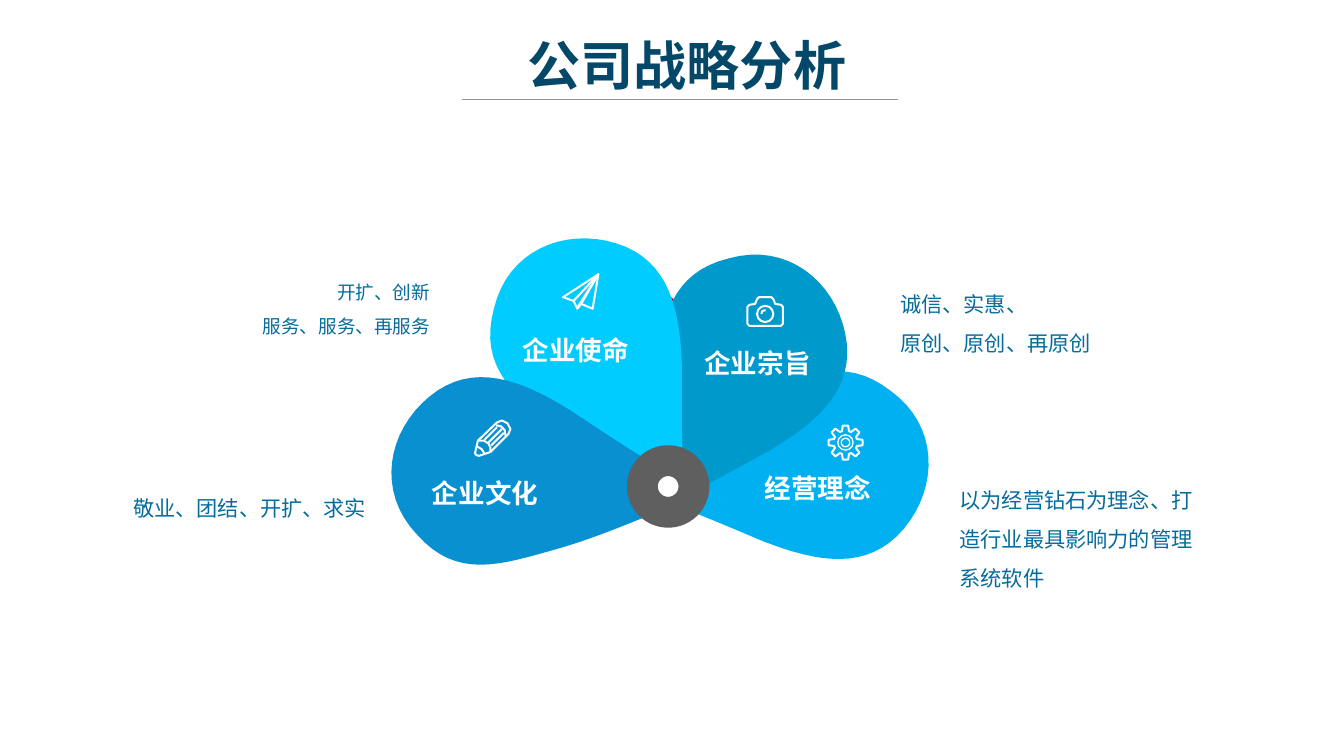
from dataclasses import dataclass
from math import cos, radians, sin
from typing import Any

from lxml import etree
from pptx import Presentation
from pptx import util as u
from pptx.dml.color import RGBColor
from pptx.enum import shapes, text
from pptx.oxml import ns

COLUMNS, ROWS = 1406, 791
FINE = 100
CURVE_STEPS = 16
LINE_HEIGHT = 1.22

PETAL = [(.83, 0), (1, .17),
         (.96, .3), (.92, .43), (.86, .57), (.76, .8), (.69, .99), (.43, 1),
         (.17, 1.02), (0, .81), (0, .57), (0, .32), (.2, .21), (.43, .13),
         (.59, .08), (.72, .04), (.83, 0)]
PETALS = [
    ((675, 332, 205, 190), 172.4, "navy"),
    ((558, 308, 205, 190), 113.1, "red"),
    ((466, 380, 205, 190), 57.9, "white"),
    ((722, 370, 241, 237), 219.9, "sky"),
    ((649, 271, 241, 237), 168.5, "teal"),
    ((504, 256, 241, 237), 107.2, "cyan"),
    ((418, 379, 241, 237), 50.5, "blue"),
]
LABELS = [
    ((442, 487, 180, 42), "企业文化"),
    ((537, 337, 145, 59), "企业使命"),
    ((727, 351, 139, 59), "企业宗旨"),
    ((790, 482, 174, 59), "经营理念"),
]
DETAILS = [
    ((128, 499, 265, 50), ["敬业、团结、开扩、求实"], "body", "RIGHT"),
    ((199, 277, 261, 80), ["开扩、创新", "服务、服务、再服务"], "small", "RIGHT"),
    ((994, 491, 269, 130), ["以为经营钻石为理念、打造行业最具影响力的管理系统软件"], "body", "LEFT"),
    ((932, 286, 261, 90), ["诚信、实惠、", "原创、原创、再原创"], "body", "LEFT"),
]
PLANE = [
    ([(626, 287), (589, 311), (600, 315), (604, 323), (608, 318), (620, 323)], True),
    ([(600, 315), (626, 287), (608, 318)], False),
    ([(604, 322), (626, 287)], False),
]
PENCIL = [
    ([(497, 474), (500, 461), (520, 442), (525, 440), (531, 443),
      (534, 449), (532, 454), (513, 473), (501, 477), (498, 476)], True),
    ([(501, 461), (506, 461), (511, 464), (513, 468), (513, 473)], False),
    ([(519, 445), (524, 446), (528, 450), (529, 456)], False),
    ([(499, 467), (504, 470), (507, 475)], False),
    ([(507, 460), (520, 447)], False),
    ([(511, 463), (525, 449)], False),
    ([(514, 466), (527, 453)], False),
]
CAMERA = [
    ([(782, 321), (784, 319), (790, 318), (792, 313), (794, 311), (807, 311),
      (809, 313), (811, 318), (817, 319), (819, 321), (819, 339), (817, 341),
      (784, 341), (782, 339)], True),
]
GLINT = [([(796.5, 328.5), (797.5, 325.5), (801, 324.5)], False)]
GEAR_CENTRE = (884.5, 463)
LENS_CENTRE = (800.5, 328.5)


def assign(target, values):
    for name, value in values.items():
        setattr(target, name, value)


def curve_points(controls):
    points = list(controls[:2])
    for first in range(2, len(controls), 3):
        a, (b, c, d) = controls[first - 1], controls[first:first + 3]
        for step in range(1, CURVE_STEPS + 1):
            t = step / CURVE_STEPS
            weights = ((1 - t) ** 3, 3 * t * (1 - t) ** 2, 3 * t * t * (1 - t), t ** 3)
            points.append(tuple(sum(w * p[axis] for w, p in zip(weights, (a, b, c, d)))
                                for axis in (0, 1)))
    return points


def gear_points(teeth=8):
    x, y = GEAR_CENTRE
    corners = ((-17, 12.5), (-9, 18), (9, 18), (17, 12.5))
    return [(x + radius * cos(radians(360 / teeth * tooth + turn)),
             y + radius * sin(radians(360 / teeth * tooth + turn)))
            for tooth in range(teeth) for turn, radius in corners]


@dataclass
class Theme:
    font = "Noto Sans CJK SC"
    sizes = {"title": 40, "label": 20, "body": 16, "small": 14}
    colours = {"white": "FFFFFF", "ink": "034868", "note": "056C9C", "rule": "969696",
               "hub": "5F5F5F", "navy": "051029", "red": "CC0023", "sky": "00B0F0",
               "teal": "0099CC", "cyan": "00CCFF", "blue": "0890D0"}

    def colour(self, name):
        return RGBColor.from_string(self.colours[name])


@dataclass
class Board:
    theme: Theme
    slide: Any
    width: int
    height: int

    def box(self, cells):
        x, y, wide, high = cells
        return {"left": round(x * self.width / COLUMNS), "top": round(y * self.height / ROWS),
                "width": round(wide * self.width / COLUMNS),
                "height": round(high * self.height / ROWS)}

    def style(self, shape, fill=None, line=None, weight=1.5):
        shape.shadow.inherit = False
        if fill:
            shape.fill.solid()
            shape.fill.fore_color.rgb = self.theme.colour(fill)
        else:
            shape.fill.background()
        if line:
            shape.line.color.rgb = self.theme.colour(line)
            shape.line.width = u.Pt(weight)
        else:
            shape.line.fill.background()

    def outline(self, contours, **style):
        builder = None
        for points, closed in contours:
            start, *rest = [(x * FINE, y * FINE) for x, y in points]
            if builder is None:
                scale = (self.width / COLUMNS / FINE, self.height / ROWS / FINE)
                builder = self.slide.shapes.build_freeform(*start, scale=scale)
            else:
                builder.move_to(*start)
            builder.add_line_segments(rest, close=closed)
        shape = builder.convert_to_shape()
        self.style(shape, **style)
        return shape

    def petal(self, cells, rotation, fill):
        x, y, wide, high = cells
        points = [(x + wide * across, y + high * down) for across, down in curve_points(PETAL)]
        shape = self.outline([(points, True)], fill=fill)
        assign(shape, {**self.box(cells), "rotation": rotation})

    def circle(self, centre, radius, **style):
        x, y = centre
        cells = self.box((x - radius, y - radius, 2 * radius, 2 * radius))
        shape = self.slide.shapes.add_shape(shapes.MSO_SHAPE.OVAL, *cells.values())
        self.style(shape, **style)

    def rule(self, x, y, length):
        place = self.box((x, y, length, 0))
        line = self.slide.shapes.add_connector(
            shapes.MSO_CONNECTOR.STRAIGHT, place["left"], place["top"],
            place["left"] + place["width"], place["top"])
        line.line.color.rgb = self.theme.colour("rule")
        line.line.width = u.Pt(0.75)
        etree.SubElement(line._element.spPr, ns.qn("a:effectLst"))

    def caption(self, cells, lines, size, colour, align, spacing=1, bold=False, wrap=True):
        frame = self.slide.shapes.add_textbox(*self.box(cells).values()).text_frame
        assign(frame, {"word_wrap": wrap, "auto_size": text.MSO_AUTO_SIZE.SHAPE_TO_FIT_TEXT})
        points = self.theme.sizes[size]
        for index, line in enumerate(lines):
            paragraph = frame.paragraphs[0] if index == 0 else frame.add_paragraph()
            assign(paragraph, {"alignment": text.PP_ALIGN[align],
                               "line_spacing": u.Pt(points * LINE_HEIGHT * spacing)})
            run = paragraph.add_run()
            run.text = line
            assign(run.font, {"name": self.theme.font, "size": u.Pt(points), "bold": bold})
            run.font.color.rgb = self.theme.colour(colour)
            etree.SubElement(run._r.get_or_add_rPr(), ns.qn("a:ea"), typeface=self.theme.font)


def main():
    presentation = Presentation()
    assign(presentation, {"slide_width": u.Inches(14.06), "slide_height": u.Inches(7.91)})
    slide = presentation.slides.add_slide(presentation.slide_layouts[6])
    board = Board(Theme(), slide, presentation.slide_width, presentation.slide_height)

    for cells, lines, size, align in DETAILS:
        board.caption(cells, lines, size, "note", align, spacing=1.5)
    board.caption((538, 28, 357, 77), ["公司战略分析"], "title", "ink", "RIGHT",
                  bold=True, wrap=False)
    board.rule(483, 104, 456)
    for petal in PETALS:
        board.petal(*petal)
    board.circle((699, 509), 27, fill="white", line="hub", weight=23.25)
    for icon in (PLANE, PENCIL, CAMERA, GLINT, [(gear_points(), True)]):
        board.outline(icon, line="white")
    board.circle(LENS_CENTRE, 8.5, line="white")
    for radius in (8, 4.5):
        board.circle(GEAR_CENTRE, radius, line="white", weight=1)
    for cells, label in LABELS:
        board.caption(cells, [label], "label", "white", "JUSTIFY", spacing=1.2, bold=True)
    presentation.save("out.pptx")


if __name__ == "__main__":
    main()
